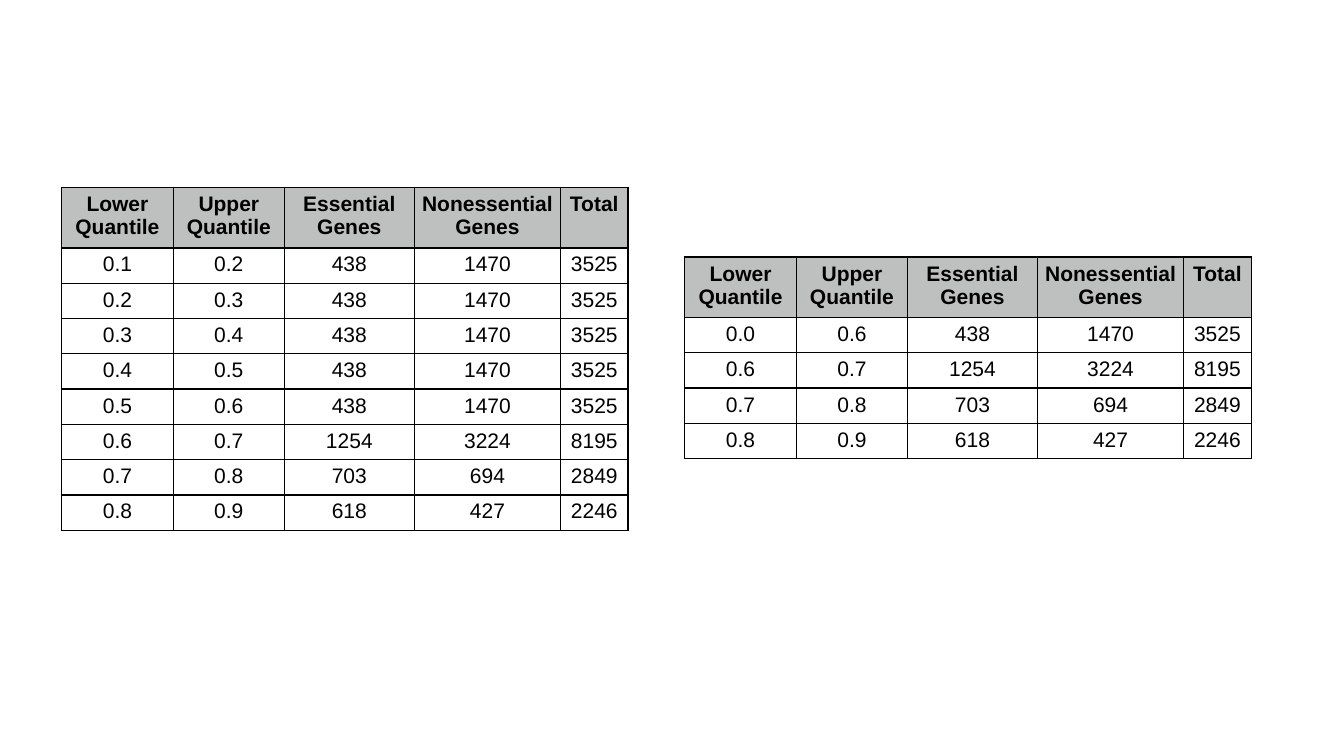
from dataclasses import dataclass

from lxml import etree
from pptx import Presentation
from pptx import util as u
from pptx.dml.color import RGBColor
from pptx.enum import text
from pptx.oxml.ns import qn
from pptx.slide import Slide
from pptx.table import _Cell

EMU_PER_PX = 9144  # 100 px to the inch
BLACK = RGBColor(0x00, 0x00, 0x00)
HEADER_GRAY = RGBColor(0xBE, 0xC0, 0xBF)

COLUMN_WIDTHS = (111, 110, 129, 145, 67)
HEADER_HEIGHT = 60
ROW_HEIGHT = 35
CELL_MARGIN = 5

Row = tuple[str, ...]
HEADER: Row = ("Lower Quantile", "Upper Quantile", "Essential Genes",
               "Nonessential Genes", "Total")
LOW_COUNTS: Row = ("438", "1470", "3525")
LOW_QUANTILES = [(f"0.{n}", f"0.{n + 1}", *LOW_COUNTS) for n in range(1, 6)]
MERGED_QUANTILES = [("0.0", "0.6", *LOW_COUNTS)]
HIGH_QUANTILES: list[Row] = [
    ("0.6", "0.7", "1254", "3224", "8195"),
    ("0.7", "0.8", "703", "694", "2849"),
    ("0.8", "0.9", "618", "427", "2246"),
]


@dataclass(frozen=True)
class QuantileTable:
    left: int
    top: int
    rows: list[Row]


QUANTILE_TABLES = (
    QuantileTable(679, 255, MERGED_QUANTILES + HIGH_QUANTILES),
    QuantileTable(61, 186, LOW_QUANTILES + HIGH_QUANTILES),
)


def px(length: int) -> u.Emu:
    return u.Emu(length * EMU_PER_PX)


def add_borders(cell: _Cell) -> None:
    properties = cell._tc.get_or_add_tcPr()
    for side in ("lnL", "lnR", "lnT", "lnB"):
        line = etree.SubElement(properties, qn(f"a:{side}"), w=str(u.Pt(1)))
        fill = etree.SubElement(line, qn("a:solidFill"))
        etree.SubElement(fill, qn("a:srgbClr"), val=str(BLACK))


def fill_cell(cell: _Cell, content: str, is_header: bool) -> None:
    add_borders(cell)
    if is_header:
        cell.fill.solid()
        cell.fill.fore_color.rgb = HEADER_GRAY
    else:
        cell.fill.background()
    cell.margin_left = cell.margin_right = px(CELL_MARGIN)
    cell.margin_top = cell.margin_bottom = px(CELL_MARGIN)
    cell.text = content
    paragraph = cell.text_frame.paragraphs[0]
    paragraph.alignment = text.PP_ALIGN.CENTER
    paragraph.font.name = "Arial"
    paragraph.font.size = u.Pt(15)
    paragraph.font.bold = is_header
    paragraph.font.color.rgb = BLACK


def add_quantile_table(slide: Slide, quantiles: QuantileTable) -> None:
    rows = [HEADER, *quantiles.rows]
    height = HEADER_HEIGHT + ROW_HEIGHT * len(quantiles.rows)
    table = slide.shapes.add_table(
        len(rows), len(HEADER), px(quantiles.left), px(quantiles.top),
        px(sum(COLUMN_WIDTHS)), px(height)).table
    table.horz_banding = False
    for column, width in zip(table.columns, COLUMN_WIDTHS):
        column.width = px(width)
    for row_index, row in enumerate(rows):
        is_header = row_index == 0
        table.rows[row_index].height = px(HEADER_HEIGHT if is_header else ROW_HEIGHT)
        for column_index, content in enumerate(row):
            fill_cell(table.cell(row_index, column_index), content, is_header)


def main() -> None:
    presentation = Presentation()
    presentation.slide_width = px(1333)
    presentation.slide_height = px(750)
    slide = presentation.slides.add_slide(presentation.slide_layouts[6])
    for quantiles in QUANTILE_TABLES:
        add_quantile_table(slide, quantiles)
    presentation.save("out.pptx")


if __name__ == "__main__":
    main()
